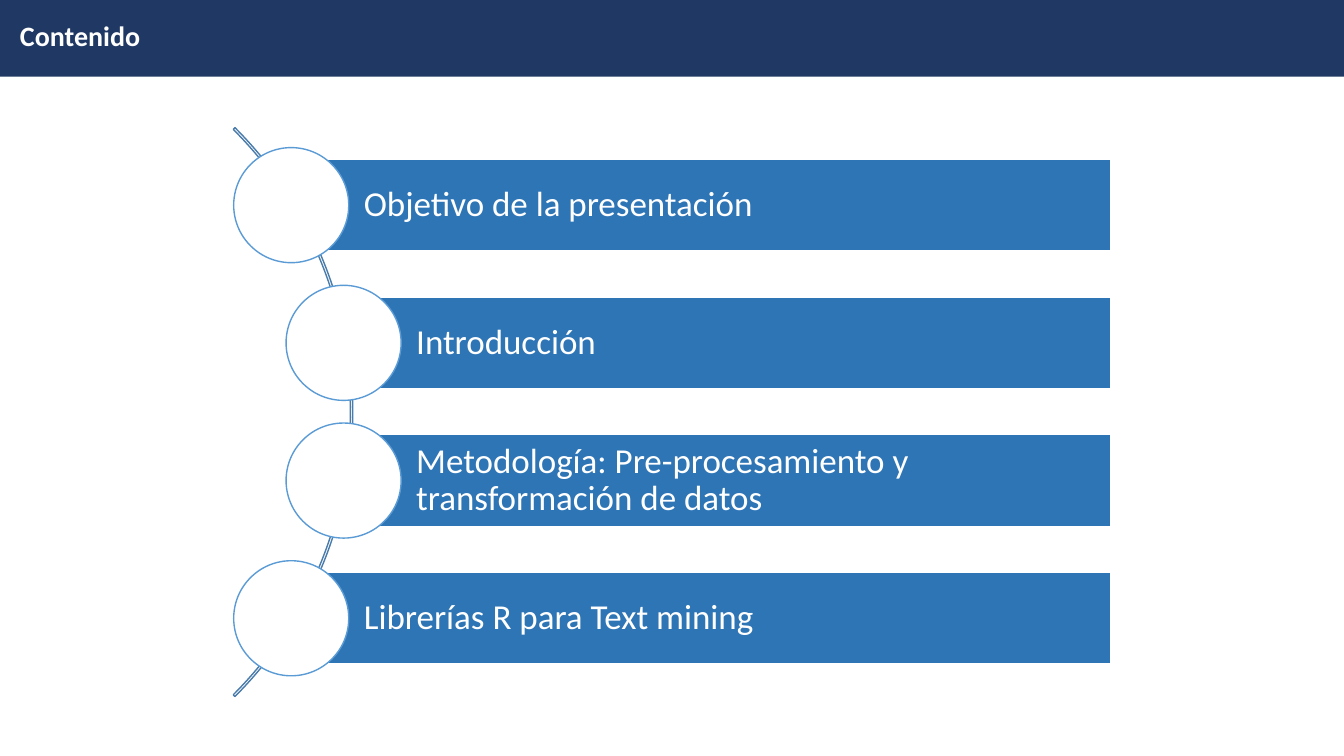
from lxml import etree
from pptx import Presentation
from pptx import util as u
from pptx.dml.color import RGBColor
from pptx.enum import shapes, text

WIDTH, HEIGHT = 33.87, 19.05
FIRST_CENTER, PITCH = 5.17, 3.47
BAR_RIGHT, BAR_HEIGHT, CIRCLE = 28, 2.31, 2.9
TOPICS = [
    ("Objetivo de la presentación", 5.89),
    ("Introducción", 7.21),
    ("Metodología: Pre-procesamiento y transformación de datos", 7.21),
    ("Librerías R para Text mining", 5.89),
]


def add_figure(kind, left, top, width, height, fill=None, line=None):
    figure = page.shapes.add_shape(kind, u.Cm(left), u.Cm(top), u.Cm(width), u.Cm(height))
    figure.shadow.inherit = False
    if fill:
        figure.fill.solid()
        figure.fill.fore_color.rgb = RGBColor.from_string(fill)
    else:
        figure.fill.background()
    if line:
        figure.line.color.rgb = RGBColor.from_string(line)
        figure.line.width = u.Pt(1)
    else:
        figure.line.fill.background()
    return figure


def write(box, words, size, bold=False):
    frame = box.text_frame
    frame.word_wrap = True
    frame.auto_size = text.MSO_AUTO_SIZE.NONE
    frame.vertical_anchor = text.MSO_ANCHOR.MIDDLE
    para = frame.paragraphs[0]
    para.alignment = text.PP_ALIGN.LEFT
    span = para.add_run()
    span.text = words
    span.font.name = "Calibri"
    span.font.size = u.Pt(size)
    span.font.bold = bold
    span.font.color.rgb = RGBColor.from_string("FFFFFF")
    return para


deck = Presentation()
deck.slide_width, deck.slide_height = u.Cm(WIDTH), u.Cm(HEIGHT)
page = deck.slides.add_slide(deck.slide_layouts[5])

title = page.shapes.title
title.left, title.top = u.Cm(0.25), u.Cm(0.33)
title.width, title.height = u.Cm(32.94), u.Cm(1.12)
write(title, "Contenido", 20, bold=True)
header = add_figure(shapes.MSO_SHAPE.RECTANGLE, 0, 0, WIDTH, 1.93, "203864")
title.element.addprevious(header.element)

arc = add_figure(shapes.MSO_SHAPE.BLOCK_ARC, -11.38, 0.25, 20.27, 20.27, line="497CAB")
for index, value in enumerate((189, 27, 0.003)):
    arc.adjustments[index] = value

for row, (topic, left) in enumerate(TOPICS):
    center = FIRST_CENTER + row * PITCH
    bar_left = left + CIRCLE / 2
    bar = add_figure(shapes.MSO_SHAPE.RECTANGLE, bar_left, center - BAR_HEIGHT / 2,
                     BAR_RIGHT - bar_left, BAR_HEIGHT, "2E75B6", "FFFFFF")
    para = write(bar, topic, 25)
    para.line_spacing = 0.9
    frame = bar.text_frame
    frame.margin_left = u.Cm(1.83)
    frame.margin_right = frame.margin_top = frame.margin_bottom = u.Cm(0.18)
    add_figure(shapes.MSO_SHAPE.OVAL, left, center - CIRCLE / 2, CIRCLE, CIRCLE,
               "FFFFFF", "5B9BD5")

deck.save("out.pptx")
